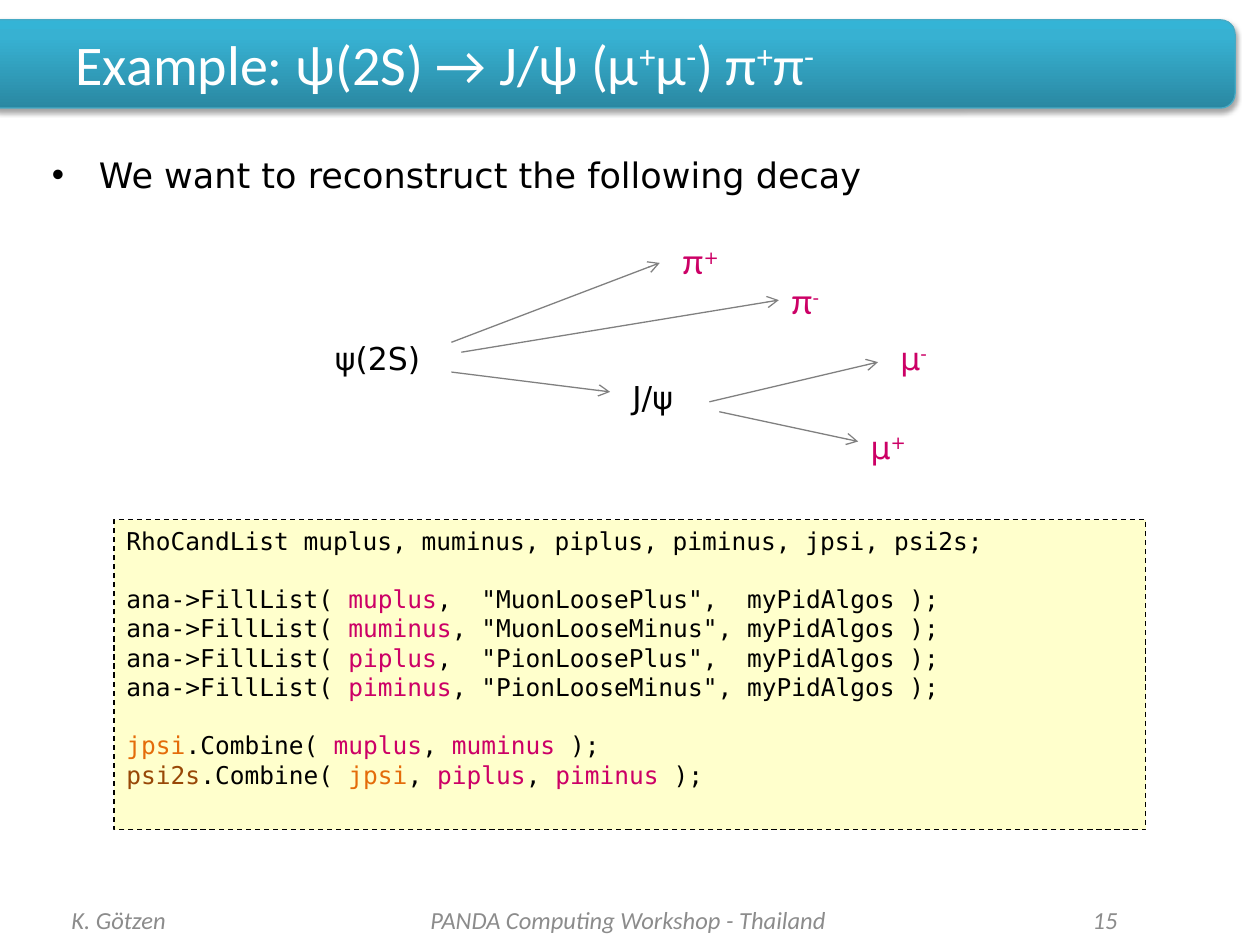
"""Build the slide on reconstructing the ψ(2S) decay."""
from copy import deepcopy
from dataclasses import dataclass, replace

from lxml.etree import SubElement
from pptx import Presentation
from pptx.dml.color import RGBColor
from pptx.enum.dml import MSO_LINE
from pptx.enum.shapes import MSO_CONNECTOR as Connector, MSO_SHAPE as Shape
from pptx.enum.text import MSO_ANCHOR as Anchor, MSO_AUTO_SIZE as AutoSize, PP_ALIGN as Align
from pptx.oxml.ns import qn
from pptx.util import Cm, Pt


@dataclass(frozen=True)
class TextStyle:
    font: str
    size: float
    colour: str
    italic: bool = False


@dataclass(frozen=True)
class Theme:
    black: str = "000000"
    particle: str = "CC0066"
    arrow: str = "808080"
    code_fill: str = "FFFFCC"
    banner_line: str = "46AAC5"
    banner_stops: tuple = ((0, "2A88A2"), (0.8, "37B1D2"), (1, "34B4D6"))
    line_width: float = 0.75
    code_gap: float = 16.3
    title: TextStyle = TextStyle("Calibri", 32, "FFFFFF")
    body: TextStyle = TextStyle("DejaVu Sans", 20, "000000")
    label: TextStyle = TextStyle("DejaVu Sans", 18, "000000")
    final: TextStyle = TextStyle("DejaVu Sans", 18, "CC0066")
    pion: TextStyle = TextStyle("Lato", 20, "CC0066")
    code: TextStyle = TextStyle("DejaVu Sans Mono", 14, "000000")
    footer: TextStyle = TextStyle("Calibri", 14, "8C8C8C", True)


THEME = Theme()
NAME_COLOURS = {"jpsi": "E46C0A", "psi2s": "984807"}


@dataclass(frozen=True)
class Box:
    left: float
    top: float
    width: float
    height: float

    def lengths(self) -> tuple:
        """Return the box as lengths."""
        return Cm(self.left), Cm(self.top), Cm(self.width), Cm(self.height)


@dataclass(frozen=True)
class Label:
    text: str
    box: Box
    style: TextStyle


@dataclass(frozen=True)
class Arrow:
    start: tuple
    end: tuple


@dataclass(frozen=True)
class Footer:
    text: str
    box: Box
    alignment: Align


@dataclass(frozen=True)
class CodeLine:
    text: str
    gap_before: bool = False


LABELS = (
    Label("ψ(2S)", Box(6.5, 6.7, 2.46, 1.02), THEME.label),
    Label("π^+", Box(13.5, 4.7, 1.32, 1.12), THEME.pion),
    Label("π^-", Box(15.7, 5.5, 1.17, 1.12), THEME.pion),
    Label("J/ψ", Box(12.5, 7.5, 1.63, 1.02), THEME.label),
    Label("μ^-", Box(17.9, 6.7, 1.12, 1.02), THEME.final),
    Label("μ^+", Box(17.3, 8.5, 1.27, 1.02), THEME.final),
)
ARROWS = (
    Arrow((9.1, 6.9), (13.3, 5.3)),
    Arrow((9.3, 7.1), (15.7, 6.05)),
    Arrow((9.1, 7.5), (12.3, 7.9)),
    Arrow((14.3, 8.1), (17.7, 7.3)),
    Arrow((14.5, 8.3), (17.3, 8.9)),
)
CODE = (
    CodeLine("RhoCandList muplus, muminus, piplus, piminus, jpsi, psi2s;"),
    CodeLine('ana->FillList( |muplus|,  "MuonLoosePlus",  myPidAlgos );', True),
    CodeLine('ana->FillList( |muminus|, "MuonLooseMinus", myPidAlgos );'),
    CodeLine('ana->FillList( |piplus|,  "PionLoosePlus",  myPidAlgos );'),
    CodeLine('ana->FillList( |piminus|, "PionLooseMinus", myPidAlgos );'),
    CodeLine("|jpsi|.Combine( |muplus|, |muminus| );", True),
    CodeLine("|psi2s|.Combine( |jpsi|, |piplus|, |piminus| );"),
)
FOOTERS = (
    Footer("K. Götzen", Box(1.19, 18.03, 5.92, 1.02), Align.LEFT),
    Footer("PANDA Computing Workshop - Thailand", Box(7.7, 18.03, 9.93, 1.02), Align.CENTER),
    Footer("15", Box(19.05, 18.03, 3.73, 1.02), Align.RIGHT),
)


def colour(value: str) -> RGBColor:
    """Turn a hexadecimal value into a colour."""
    return RGBColor.from_string(value)


def apply_style(font, style: TextStyle) -> None:
    """Give a font its face, size, colour and slant."""
    font.name, font.size, font.italic = style.font, Pt(style.size), style.italic
    font.color.rgb = colour(style.colour)


def add_run(paragraph, text: str, style: TextStyle):
    """Append a styled run."""
    run = paragraph.add_run()
    run.text = text
    apply_style(run.font, style)
    return run


def write_charges(paragraph, text: str, base: TextStyle, raised: TextStyle) -> None:
    """Write text in which every second part between carets is superscript."""
    for index, part in enumerate(text.split("^")):
        if part:
            run = add_run(paragraph, part, raised if index % 2 else base)
            if index % 2:
                run.font._element.set("baseline", "30000")


def add_banner(slide) -> None:
    """Place the shaded band behind the title."""
    banner = slide.shapes.add_shape(Shape.ROUNDED_RECTANGLE, *Box(-0.3, 0.4, 25.2, 1.78).lengths())
    slide.shapes.title.element.addprevious(banner.element)
    banner.line.color.rgb = colour(THEME.banner_line)
    banner.line.width = Pt(THEME.line_width)
    banner.fill.gradient()
    banner.fill.gradient_angle = 90
    properties = banner.element.spPr
    stop_list = properties.find(".//" + qn("a:gsLst"))
    stop_list.append(deepcopy(stop_list[0]))
    for stop, (position, value) in zip(banner.fill.gradient_stops, THEME.banner_stops):
        stop.position, stop.color.rgb = position, colour(value)
    banner.shadow.inherit = False
    shadow = SubElement(properties.find(qn("a:effectLst")), qn("a:outerShdw"), blurRad=str(Pt(3.1)),
                        dist=str(Pt(1.8)), dir="5400000", rotWithShape="0")
    shade = SubElement(shadow, qn("a:srgbClr"), val=THEME.black)
    SubElement(shade, qn("a:alpha"), val="35000")


def fill_placeholders(slide) -> None:
    """Write the title and the bullet."""
    title, body = slide.placeholders
    title.left, title.top, title.width, title.height = Box(1.27, 0.46, 22.86, 1.63).lengths()
    title.text_frame.vertical_anchor = Anchor.MIDDLE
    heading = title.text_frame.paragraphs[0]
    heading.alignment = Align.LEFT
    write_charges(heading, "Example: ψ(2S) → J/ψ (μ^+^μ^-^) π^+^π^-", THEME.title, THEME.title)
    body.left, body.top, body.width, body.height = Box(0.79, 2.97, 23.83, 14.68).lengths()
    body.text_frame.text = "We want to reconstruct the following decay"
    bullet = body.text_frame.paragraphs[0]
    properties = bullet._p.get_or_add_pPr()
    properties.set("marL", str(Cm(0.95)))
    properties.set("indent", str(-Cm(0.95)))
    SubElement(properties, qn("a:buChar"), char="•")
    bullet.space_before = Pt(0)
    apply_style(bullet.runs[0].font, THEME.body)


def add_label(shapes, label: Label) -> None:
    """Place a particle name."""
    frame = shapes.add_textbox(*label.box.lengths()).text_frame
    frame.word_wrap = False
    frame.auto_size = AutoSize.SHAPE_TO_FIT_TEXT
    write_charges(frame.paragraphs[0], label.text, label.style, replace(THEME.label, colour=THEME.particle))


def add_arrow(shapes, arrow: Arrow) -> None:
    """Draw a decay arrow."""
    connector = shapes.add_connector(Connector.STRAIGHT, *map(Cm, arrow.start + arrow.end))
    connector.line.color.rgb = colour(THEME.arrow)
    connector.line.width = Pt(THEME.line_width)
    properties = connector.element.spPr
    SubElement(properties.find(qn("a:ln")), qn("a:tailEnd"), type="arrow")
    SubElement(properties, qn("a:effectLst"))


def add_code(slide) -> None:
    """Draw the code listing in its dashed box."""
    panel = slide.shapes.add_shape(Shape.RECTANGLE, *Box(2.3, 10.48, 20.8, 6.25).lengths())
    panel.shadow.inherit = False
    panel.fill.solid()
    panel.fill.fore_color.rgb = colour(THEME.code_fill)
    panel.line.color.rgb = colour(THEME.black)
    panel.line.width = Pt(THEME.line_width)
    panel.line.dash_style = MSO_LINE.DASH
    frame = panel.text_frame
    frame.word_wrap, frame.vertical_anchor = True, Anchor.TOP
    for number, line in enumerate(CODE):
        paragraph = frame.add_paragraph() if number else frame.paragraphs[0]
        paragraph.alignment = Align.LEFT
        if line.gap_before:
            paragraph.space_before = Pt(THEME.code_gap)
        for index, part in enumerate(line.text.split("|")):
            if part:
                value = NAME_COLOURS.get(part, THEME.particle) if index % 2 else THEME.black
                add_run(paragraph, part, replace(THEME.code, colour=value))


def add_footer(slide, footer: Footer) -> None:
    """Place a footer text."""
    frame = slide.shapes.add_textbox(*footer.box.lengths()).text_frame
    frame.word_wrap, frame.vertical_anchor = True, Anchor.MIDDLE
    frame.text = footer.text
    frame.paragraphs[0].alignment = footer.alignment
    apply_style(frame.paragraphs[0].runs[0].font, THEME.footer)


def main() -> None:
    """Build and save the presentation."""
    presentation = Presentation()
    presentation.slide_width, presentation.slide_height = Cm(25.4), Cm(19.05)
    slide = presentation.slides.add_slide(presentation.slide_layouts[1])
    add_banner(slide)
    fill_placeholders(slide)
    decay = slide.shapes.add_group_shape().shapes
    for arrow in ARROWS:
        add_arrow(decay, arrow)
    for label in LABELS:
        add_label(decay, label)
    add_code(slide)
    for footer in FOOTERS:
        add_footer(slide, footer)
    presentation.save("out.pptx")


if __name__ == "__main__":
    main()
